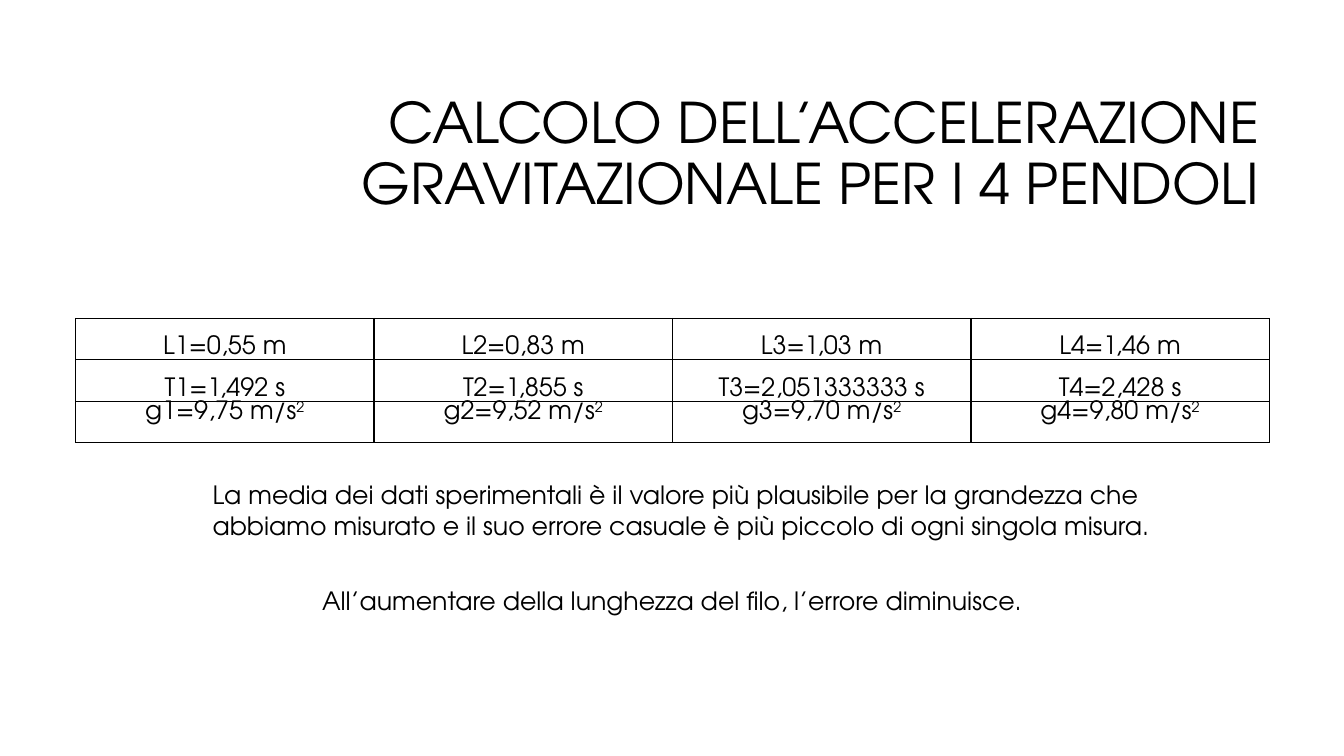
from lxml.etree import SubElement as Sub
from pptx import Presentation
from pptx.dml.color import RGBColor
from pptx.enum.text import MSO_ANCHOR as Anchor, MSO_AUTO_SIZE as Auto, PP_ALIGN as Align
from pptx.oxml.ns import qn
from pptx.util import Pt

# Content
TITLE = "CALCOLO DELL’ACCELERAZIONE GRAVITAZIONALE PER I 4 PENDOLI"
ROWS = [
    ["L1=0,55 m", "L2=0,83 m", "L3=1,03 m", "L4=1,46 m"],
    ["T1=1,492 s", "T2=1,855 s", "T3=2,051333333 s", "T4=2,428 s"],
    ["g1=9,75 m/s", "g2=9,52 m/s", "g3=9,70 m/s", "g4=9,80 m/s"],
]
POWER = "2"
NOTES = [  # text, box, wrap, alignment
    ("All’aumentare della lunghezza del filo, l’errore diminuisce.",
     (307, 576, 719, 40), False, Align.CENTER),
    ("La media dei dati sperimentali è il valore più plausibile per la "
     "grandezza che abbiamo misurato e il suo errore casuale è più piccolo "
     "di ogni singola misura.",
     (201, 471, 979, 71), True, Align.LEFT),
]
FONT, INK, BODY = "TeX Gyre Adventor", "000000", 18
LEFT, TOP, COL, ROW = 75, 316, 296, 41


def px(n):
    return n * 9144  # 100 px to the inch


def hue(code):
    return RGBColor.from_string(code)


def put(par, text, size=BODY):
    run = par.add_run()
    run.text = text
    run.font.name, run.font.size = FONT, Pt(size)
    run.font.color.rgb = hue(INK)
    return run


def frame(cell):
    props = cell._tc.get_or_add_tcPr()
    for i, side in enumerate(("lnL", "lnR", "lnT", "lnB")):
        line = props.makeelement(qn("a:" + side), {"w": str(Pt(1))})
        fill = Sub(line, qn("a:solidFill"))
        Sub(fill, qn("a:srgbClr"), val=INK)
        props.insert(i, line)


deck = Presentation()
deck.slide_width, deck.slide_height = px(1333), px(750)
slide = deck.slides.add_slide(deck.slide_layouts[5])

# Title
title = slide.shapes.title
title.left, title.top, title.width, title.height = map(px, (317, 84, 942, 141))
body = title.text_frame
body.word_wrap, body.auto_size = True, Auto.NONE
body.vertical_anchor = Anchor.MIDDLE
par = body.paragraphs[0]
par.alignment, par.line_spacing = Align.RIGHT, 0.9
put(par, TITLE, 40)

# Table of lengths, periods and gravity
rows, cols = len(ROWS), len(ROWS[0])
table = slide.shapes.add_table(
    rows, cols, px(LEFT), px(TOP), px(cols * COL), px(rows * ROW)).table
table.first_row = table.horz_banding = False
for r, row in enumerate(ROWS):
    table.rows[r].height = px(ROW)
    last = r == rows - 1
    for c, text in enumerate(row):
        table.columns[c].width = px(COL)
        cell = table.cell(r, c)
        cell.margin_left = cell.margin_right = px(1)
        cell.margin_top = cell.margin_bottom = 0
        cell.vertical_anchor = Anchor.TOP if last else Anchor.BOTTOM
        cell.fill.background()
        frame(cell)
        par = cell.text_frame.paragraphs[0]
        par.alignment = Align.CENTER
        put(par, text)
        if last:
            put(par, POWER).font._element.set("baseline", "30000")

# Closing remarks
for text, box, wrap, align in NOTES:
    body = slide.shapes.add_textbox(*map(px, box)).text_frame
    body.word_wrap, body.auto_size = wrap, Auto.SHAPE_TO_FIT_TEXT
    par = body.paragraphs[0]
    par.alignment = align
    put(par, text)

deck.save("out.pptx")
